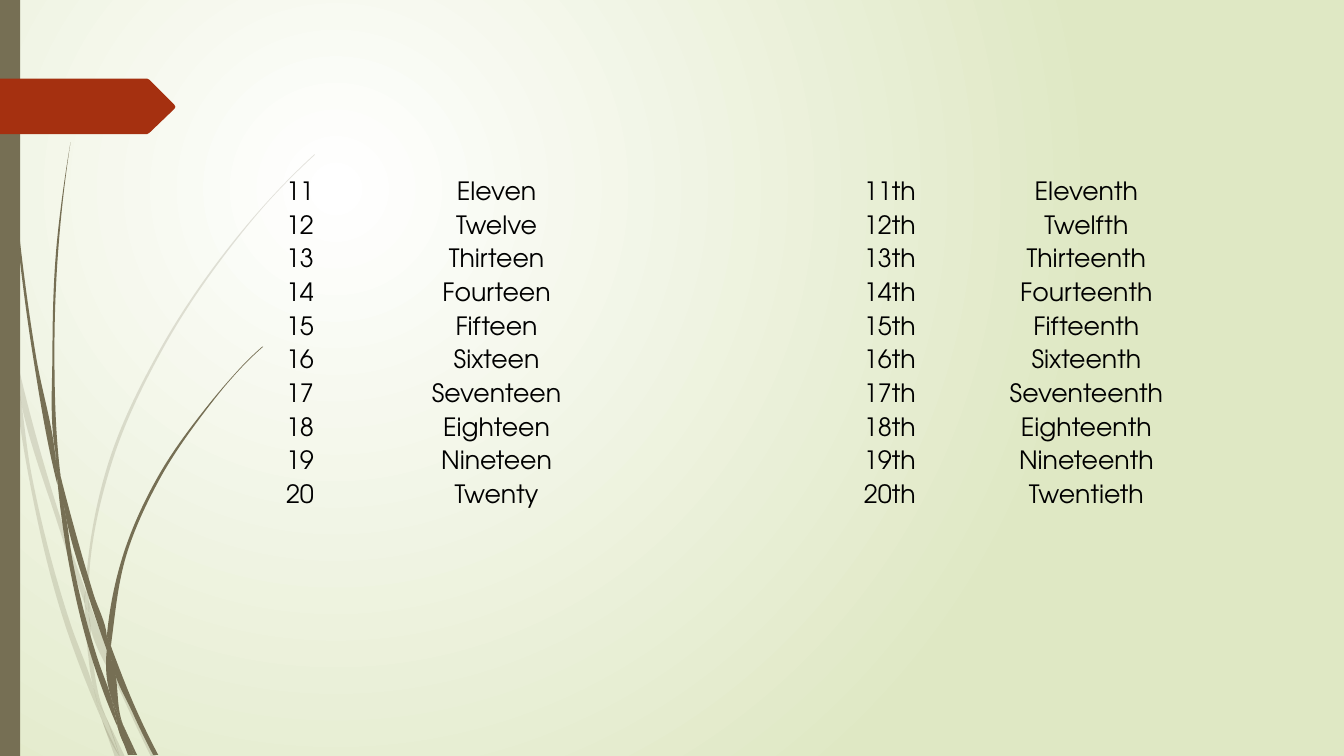
from math import dist

from lxml import etree
from pptx import Presentation
from pptx import util as u
from pptx.dml.color import RGBColor
from pptx.enum import shapes, text
from pptx.oxml import ns

OLIVE = RGBColor(0x76, 0x6F, 0x54)
RUST = RGBColor(0xA5, 0x30, 0x10)
BLACK = RGBColor(0, 0, 0)
WHITE = RGBColor(0xFF, 0xFF, 0xFF)
PALE_GREEN = RGBColor(0xDF, 0xE8, 0xC4)
FONT = "TeX Gyre Adventor"
NO_STYLE = "{2D5ABB26-0587-4C30-8999-92F81FD0307C}"

BACK_BLADES = [
    ([(0, 2.82), (0.09, 3.22), (0.11, 3.5)],
     [(0.11, 3.5), (0.1, 3.44), (0, 2.99)]),
    ([(0.14, 3.45), (0.17, 3.76), (0.58, 5.22), (0.84, 5.99)],
     [(0.85, 5.86), (0.62, 5.2), (0.14, 3.45)]),
    ([(0.88, 5.96), (0.88, 6.1), (1.23, 6.94), (1.5, 7.51)],
     [(1.55, 7.51), (1.27, 6.92), (0.92, 6.07), (0.88, 5.96)]),
    ([(1.05, 7.11), (1.19, 7.51)], [(1.24, 7.51), (1.05, 7.11)]),
    ([(0.11, 3.5), (0.28, 4.7), (0.65, 6.21), (0.92, 6.93), (1.01, 7.14)],
     [(1.01, 7.14), (0.99, 7.07), (0.93, 6.83), (0.7, 6.19), (0.31, 4.69),
      (0.17, 3.76), (0.11, 3.5)]),
    ([(0.84, 5.99), (0.87, 6.46), (0.93, 6.83), (0.96, 6.92), (1.05, 7.11)],
     [(1.05, 7.11), (1.03, 7.06), (0.91, 6.46), (0.88, 6.1), (0.84, 5.99)]),
    ([(3.12, 1.53), (2.89, 1.75), (2.68, 1.97), (2.28, 2.44), (1.58, 3.48),
      (1.07, 4.61), (0.85, 5.84)],
     [(0.88, 5.96), (0.88, 5.84), (1.1, 4.62), (1.6, 3.49), (2.29, 2.45),
      (2.68, 1.98), (2.9, 1.75), (3.12, 1.54)]),
    ([(1.01, 7.14), (1.14, 7.51)], [(1.19, 7.51), (1.01, 7.14)]),
    ([(0.85, 5.86), (0.84, 5.99), (0.88, 6.08)],
     [(0.88, 6.1), (0.88, 5.96), (0.85, 5.86)]),
    ([(0.93, 6.83), (0.99, 7.07), (1.01, 7.14), (1.19, 7.51)],
     [(1.19, 7.51), (1.05, 7.11), (0.96, 6.92), (0.93, 6.83)]),
]
FRONT_BLADES = [
    ([(0.03, 0), (0.04, 0.48), (0.07, 1.1), (0.17, 2.33), (0.33, 3.55),
      (0.56, 4.77), (0.57, 4.81)],
     [(0.57, 4.81), (0.55, 4.53), (0.36, 3.55), (0.19, 2.32), (0.08, 1.09),
      (0.05, 0.48), (0.04, 0)]),
    ([(0.6, 4.72), (0.64, 5.05), (0.88, 5.92), (1.06, 6.45)],
     [(1.06, 6.45), (1.06, 6.31), (0.93, 5.9), (0.6, 4.72)]),
    ([(1.1, 6.41), (1.11, 6.56), (1.32, 7.08), (1.52, 7.49)],
     [(1.57, 7.49), (1.36, 7.06), (1.13, 6.49), (1.1, 6.41)]),
    ([(0.57, 4.77), (0.68, 5.57), (0.93, 6.59), (1.11, 7.08), (1.17, 7.22)],
     [(1.17, 7.22), (1.16, 7.17), (1.1, 6.91), (0.98, 6.57), (0.72, 5.56),
      (0.64, 5.05), (0.57, 4.77)]),
    ([(0.7, 1.41), (0.62, 1.93), (0.56, 2.45), (0.52, 3.49), (0.55, 4.49),
      (0.6, 4.72)],
     [(0.6, 4.72), (0.58, 4.53), (0.54, 3.49), (0.58, 2.45), (0.63, 1.93),
      (0.7, 1.41)]),
    ([(1.22, 7.19), (1.33, 7.49)], [(1.36, 7.49), (1.22, 7.19)]),
    ([(0.55, 4.49), (0.57, 4.77), (0.64, 5.05)],
     [(0.64, 5.05), (0.6, 4.72), (0.55, 4.49)]),
    ([(2.6, 3.44), (2.45, 3.58), (2.31, 3.73), (2.04, 4.05), (1.56, 4.74),
      (1.22, 5.51), (1.06, 6.31)],
     [(1.1, 6.41), (1.11, 6.33), (1.25, 5.52), (1.58, 4.76), (2.05, 4.06),
      (2.31, 3.74), (2.45, 3.59), (2.61, 3.44)]),
    ([(1.17, 7.22), (1.27, 7.49)], [(1.31, 7.49), (1.17, 7.22)]),
    ([(1.06, 6.45), (1.1, 6.91), (1.16, 7.06), (1.22, 7.19)],
     [(1.22, 7.19), (1.21, 7.16), (1.11, 6.56), (1.06, 6.45)]),
    ([(1.06, 6.31), (1.06, 6.45), (1.11, 6.56)],
     [(1.11, 6.56), (1.1, 6.41), (1.06, 6.31)]),
    ([(1.1, 6.91), (1.16, 7.17), (1.17, 7.22), (1.3, 7.49)],
     [(1.33, 7.49), (1.22, 7.19), (1.16, 7.06), (1.1, 6.91)]),
]
RIBBON = [(0, 0), (1.46, 0), (1.48, 0.01), (1.73, 0.26), (1.74, 0.28),
          (1.73, 0.3), (1.48, 0.54), (1.46, 0.55), (0, 0.55)]
NUMBERS = [
    ("Eleven", "Eleventh"), ("Twelve", "Twelfth"),
    ("Thirteen", "Thirteenth"), ("Fourteen", "Fourteenth"),
    ("Fifteen", "Fifteenth"), ("Sixteen", "Sixteenth"),
    ("Seventeen", "Seventeenth"), ("Eighteen", "Eighteenth"),
    ("Nineteen", "Nineteenth"), ("Twenty", "Twentieth"),
]


def edge_handles(points):
    """Return the two Bezier handle offsets of each segment of an edge."""
    gaps = [dist(a, b) for a, b in zip(points, points[1:])]
    slopes = [((b[0] - a[0]) / h, (b[1] - a[1]) / h)
              for a, b, h in zip(points, points[1:], gaps)]
    turns = [tuple((p * k + q * h) / (h + k) for p, q in zip(d, e))
             for d, e, h, k in zip(slopes, slopes[1:], gaps, gaps[1:])]
    inner = turns or slopes
    first = tuple(2 * d - m for d, m in zip(slopes[0], inner[0]))
    last = tuple(2 * d - m for d, m in zip(slopes[-1], inner[-1]))
    tangents = [first, *turns, last]
    return [((m[0] * h / 3, m[1] * h / 3), (-n[0] * h / 3, -n[1] * h / 3))
            for m, n, h in zip(tangents, tangents[1:], gaps)]


def paint(sp, color):
    """Give a shape a flat fill without outline or shadow."""
    sp.fill.solid()
    sp.fill.fore_color.rgb = color
    sp.line.fill.background()
    sp.shadow.inherit = False


def add_outline(parent, points, left, top, color):
    """Draw a closed polygon relative to a corner, in inches."""
    pts = [(u.Inches(left + x), u.Inches(top + y)) for x, y in points]
    builder = parent.build_freeform(*pts[0])
    builder.add_line_segments(pts[1:], close=True)
    sp = builder.convert_to_shape()
    paint(sp, color)
    return sp


def add_blade(parent, down, up, left, top):
    """Draw one blade whose two edges are smooth curves."""
    joined = down[-1] == up[0]
    sp = add_outline(parent, down + up[joined:], left, top, OLIVE)
    handles = edge_handles(down) + [None] * (not joined) + edge_handles(up)
    nodes = list(sp._element.iter(ns.qn("a:pt")))
    for start, end, pair in zip(nodes, nodes[1:], handles):
        if pair:
            line = end.getparent()
            curve = etree.Element(ns.qn("a:cubicBezTo"))
            for node, (dx, dy) in zip((start, end), pair):
                etree.SubElement(curve, ns.qn("a:pt"),
                                 x=str(int(node.get("x")) + u.Inches(dx)),
                                 y=str(int(node.get("y")) + u.Inches(dy)))
            curve.append(end)
            line.getparent().replace(line, curve)
    return sp


def add_background(s):
    """Fill the slide with a radial gradient lit from the upper left."""
    fill = s.background.fill
    fill.gradient()
    for stop, color in zip(fill.gradient_stops, (WHITE, PALE_GREEN)):
        stop.color.rgb = color
    grad = next(s.background._cSld.iter(ns.qn("a:gradFill")))
    grad.remove(grad.find(ns.qn("a:lin")))
    glow = etree.SubElement(grad, ns.qn("a:path"), path="circle")
    etree.SubElement(glow, ns.qn("a:fillToRect"),
                     l="50000", t="50000", r="100000", b="100000")


def add_grass(s, blades, left, top, opacity):
    """Draw a group of grass blades."""
    group = s.shapes.add_group_shape()
    for down, up in blades:
        sp = add_blade(group.shapes, down, up, left, top)
        if opacity < 100:
            clr = next(sp._element.spPr.iter(ns.qn("a:srgbClr")))
            etree.SubElement(clr, ns.qn("a:alpha"), val=str(opacity * 1000))


def add_side_bar(s, *box):
    """Draw the bar along the slide edge."""
    bar = s.shapes.add_shape(shapes.MSO_SHAPE.RECTANGLE, *map(u.Inches, box))
    paint(bar, OLIVE)


def add_number_table(s, *box):
    """Place the table of cardinal and ordinal numbers."""
    table = s.shapes.add_table(len(NUMBERS), 5, *map(u.Inches, box)).table
    table.first_row = table.horz_banding = False
    table._tbl.tblPr.find(ns.qn("a:tableStyleId")).text = NO_STYLE
    for row, (cardinal, ordinal) in enumerate(NUMBERS):
        number = str(row + 11)
        values = (number, cardinal, "", f"{number}th", ordinal)
        for col, value in enumerate(values):
            cell = table.cell(row, col)
            cell.fill.background()
            cell.margin_left = cell.margin_right = cell.margin_bottom = 0
            cell.margin_top = u.Pt(0.75)
            cell.vertical_anchor = text.MSO_ANCHOR.MIDDLE
            if value:
                p = cell.text_frame.paragraphs[0]
                p.alignment = text.PP_ALIGN.CENTER
                r = p.add_run()
                r.text = value
                r.font.size = u.Pt(18)
                r.font.name = FONT
                r.font.color.rgb = BLACK


def main():
    """Build the slide and save it."""
    prs = Presentation()
    prs.slide_width, prs.slide_height = u.Inches(13.33), u.Inches(7.5)
    s = prs.slides.add_slide(prs.slide_layouts[6])
    add_background(s)
    add_grass(s, BACK_BLADES, 0, 0, 20)
    add_grass(s, FRONT_BLADES, 0, 0, 100)
    add_side_bar(s, 0, 0, 0.2, 7.5)
    add_outline(s.shapes, RIBBON, 0, 0.78, RUST)
    add_number_table(s, 2, 1.75, 9.75, 3.34)
    prs.save("out.pptx")


if __name__ == "__main__":
    main()
